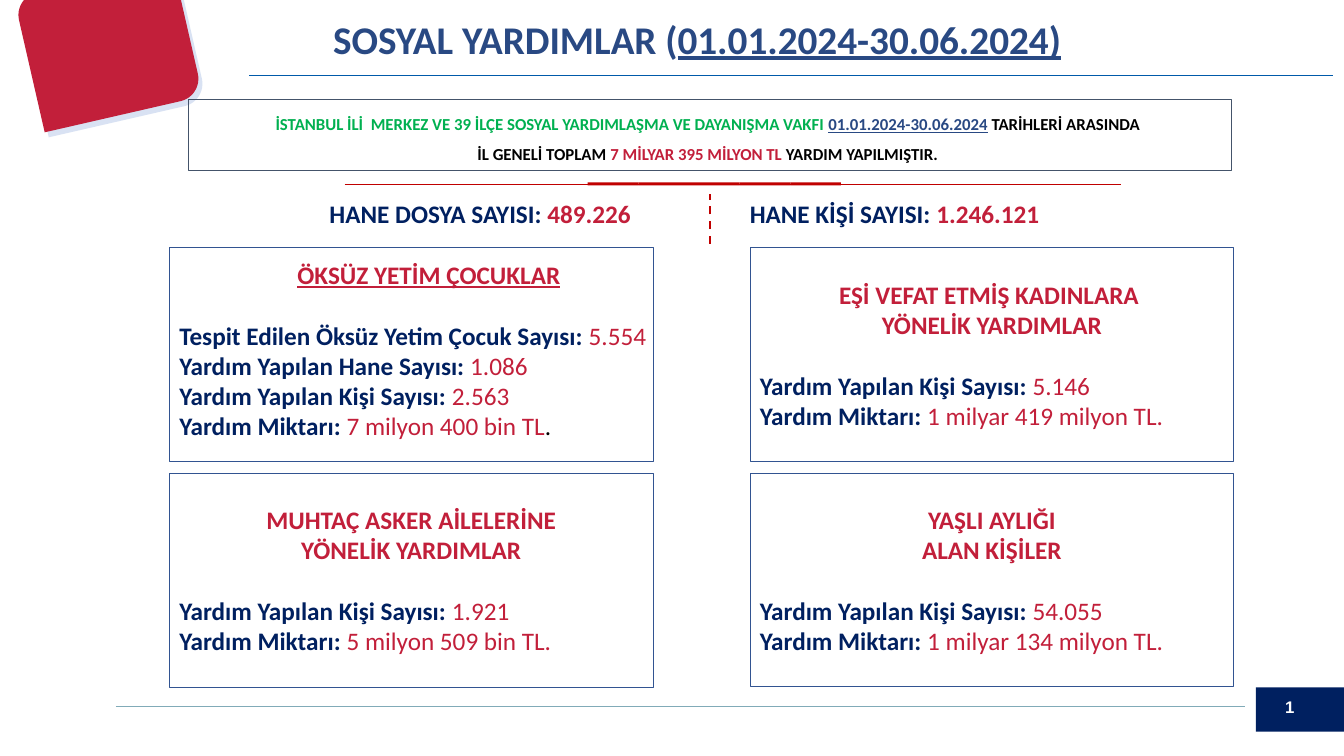
from dataclasses import dataclass

from lxml.etree import SubElement
from pptx import Presentation
from pptx.dml.color import RGBColor
from pptx.enum.dml import MSO_LINE_DASH_STYLE as Dash
from pptx.enum.shapes import MSO_CONNECTOR as Connector, MSO_SHAPE as Preset
from pptx.enum.text import MSO_ANCHOR as Anchor, MSO_AUTO_SIZE as AutoSize, PP_ALIGN as Align
from pptx.oxml.ns import qn
from pptx.util import Inches, Pt


@dataclass(frozen=True)
class Theme:
    """Colours, fonts and type sizes of the slide."""
    navy: str = "002060"
    crimson: str = "C21F3A"
    red: str = "C00000"
    title: str = "294983"
    green: str = "00B050"
    black: str = "000000"
    white: str = "FFFFFF"
    shade: str = "4472C4"
    card: str = "325491"
    slate: str = "44546A"
    rule: str = "005AAA"
    footer: str = "81ABB8"
    font: str = "Calibri"
    number_font: str = "Arial"
    title_size: int = 28
    body_size: int = 18
    small_size: int = 12


@dataclass(frozen=True)
class Ink:
    """One run of text with its look."""
    text: str
    color: str
    bold: bool = True
    underline: bool = False


@dataclass(frozen=True)
class Line:
    """One paragraph with its alignment and spacing."""
    runs: tuple
    align: Align = Align.LEFT
    after: float = 0
    spacing: float = 1


class Board:
    """Draws on one slide; lengths are percent of its width and height."""

    def __init__(self, deck, theme):
        """Add a title-only slide to the deck."""
        self.deck, self.theme = deck, theme
        self.slide = deck.slides.add_slide(deck.slide_layouts[5])

    def place(self, x, y, w, h):
        """Turn percent shares into slide lengths."""
        width, height = self.deck.slide_width, self.deck.slide_height
        return [round(share * full / 100) for share, full in zip((x, y, w, h), (width, height) * 2)]

    def rule(self, start, end, color, weight, dash=None):
        """Draw a straight line between two points."""
        line = self.slide.shapes.add_connector(Connector.STRAIGHT, *self.place(*start, *end))
        line.line.color.rgb = RGBColor.from_string(color)
        line.line.width = Pt(weight)
        if dash:
            line.line.dash_style = dash
        SubElement(line._element.spPr, qn("a:effectLst"))

    def panel(self, box, fill=None, outline=None, weight=0.5, preset=Preset.RECTANGLE, turn=0, alpha=None):
        """Draw a preset shape, filled or outlined."""
        panel = self.slide.shapes.add_shape(preset, *self.place(*box))
        panel.shadow.inherit = False
        panel.rotation = turn
        if fill:
            panel.fill.solid()
            panel.fill.fore_color.rgb = RGBColor.from_string(fill)
        else:
            panel.fill.background()
        if outline:
            panel.line.color.rgb = RGBColor.from_string(outline)
            panel.line.width = Pt(weight)
        else:
            panel.line.fill.background()
        if alpha:
            color = panel._element.spPr.find(qn("a:solidFill"))[0]
            SubElement(color, qn("a:alpha")).set("val", str(alpha * 1000))
        return panel

    def fill_text(self, shape, lines, size, font=None):
        """Fill a shape with paragraphs, run by run."""
        frame = shape.text_frame
        frame.word_wrap = True
        frame.auto_size = AutoSize.NONE
        frame.vertical_anchor = Anchor.TOP
        for index, line in enumerate(lines):
            paragraph = frame.add_paragraph() if index else frame.paragraphs[0]
            paragraph.alignment = line.align
            paragraph.line_spacing = line.spacing
            paragraph.space_before, paragraph.space_after = Pt(0), Pt(line.after)
            for ink in line.runs:
                run = paragraph.add_run()
                run.text = ink.text
                run.font.name = font or self.theme.font
                run.font.size = Pt(size)
                run.font.bold, run.font.underline = ink.bold, ink.underline
                run.font.color.rgb = RGBColor.from_string(ink.color)

    def text(self, box, lines, size, font=None):
        """Add a text box."""
        self.fill_text(self.slide.shapes.add_textbox(*self.place(*box)), lines, size, font)

    def title(self, box, lines):
        """Move and fill the title placeholder."""
        heading = self.slide.shapes.title
        heading.left, heading.top, heading.width, heading.height = self.place(*box)
        self.fill_text(heading, lines, self.theme.title_size)

    def card(self, corner, text_box, heading, facts, underline=False, tail=()):
        """Draw a framed card with a heading and its figures."""
        theme = self.theme
        self.panel((*corner, 36, 28.27), outline=theme.card)
        last = len(heading) - 1
        lines = [Line((Ink(words, theme.crimson, underline=underline),), Align.CENTER, 22 if i == last else 0)
                 for i, words in enumerate(heading)]
        for label, value in facts:
            closing = tail if label == AMOUNT else ()
            lines.append(Line((Ink(f"{label}: ", theme.navy), Ink(value, theme.crimson, False), *closing)))
        self.text(text_box, lines, theme.body_size)


PEOPLE = "Yardım Yapılan Kişi Sayısı"
AMOUNT = "Yardım Miktarı"
PERIOD = "01.01.2024-30.06.2024"
LEFT, RIGHT = 12.6, 55.8


def main():
    """Build and save the slide."""
    deck = Presentation()
    deck.slide_width, deck.slide_height = Inches(13.33), Inches(7.5)
    theme = Theme()
    board = Board(deck, theme)

    board.rule((8.63, 93.47), (92.63, 93.47), theme.footer, 0.75)
    board.panel((93.45, 90.93, 6.55, 5.87), theme.navy)
    board.text((94.88, 91.47, 7.43, 4), [Line((Ink("1", theme.white),))], theme.small_size, theme.number_font)
    board.rule((18.53, 10), (99.15, 10), theme.rule, 1)
    for x, y, color, alpha in ((2.33, -2.27, theme.shade, 20), (2.03, -2.93, theme.crimson, None)):
        board.panel((x, y, 12.08, 18.27), color, preset=Preset.ROUND_2_DIAG_RECTANGLE, turn=347.1, alpha=alpha)

    board.title((11.63, 1.33, 80.48, 7.6), [Line((
        Ink("SOSYAL YARDIMLAR (", theme.title),
        Ink(f"{PERIOD})", theme.title, underline=True)), Align.CENTER)])

    summary = board.panel((14.03, 13.07, 77.55, 9.47), outline=theme.slate, weight=0.25)
    board.fill_text(summary, [
        Line((Ink("İSTANBUL İLİ  MERKEZ VE 39 İLÇE SOSYAL YARDIMLAŞMA VE DAYANIŞMA VAKFI ", theme.green),
              Ink(PERIOD, theme.title, underline=True),
              Ink(" TARİHLERİ ARASINDA ", theme.black)), Align.CENTER, spacing=1.5),
        Line((Ink("İL GENELİ TOPLAM ", theme.black),
              Ink("7 MİLYAR 395 MİLYON TL ", theme.crimson),
              Ink("YARDIM YAPILMIŞTIR. ", theme.black)), Align.CENTER, spacing=1.5),
    ], theme.small_size)

    for step in range(5):
        board.panel((43.73 + step * 3.77, 24.13, 3.77, 0.4), theme.red)
    board.rule((25.65, 24.33), (83.4, 24.33), theme.red, 0.5)
    board.rule((52.8, 32.27), (52.8, 25.6), theme.red, 1.5, Dash.DASH)

    for x, label, count in ((23.78, "HANE DOSYA SAYISI: ", "489.226"), (55.05, "HANE KİŞİ SAYISI: ", "1.246.121")):
        board.text((x, 25.6, 27.38, 5.33),
                   [Line((Ink(label, theme.navy), Ink(count, theme.crimson)))], theme.body_size)

    board.card((LEFT, 32.7), (LEFT, 33.6, 38.63, 25.6), ["ÖKSÜZ YETİM ÇOCUKLAR"], [
        ("Tespit Edilen Öksüz Yetim Çocuk Sayısı", "5.554"),
        ("Yardım Yapılan Hane Sayısı", "1.086"),
        (PEOPLE, "2.563"),
        (AMOUNT, "7 milyon 400 bin TL"),
    ], underline=True, tail=(Ink(".", theme.black, False),))
    for x, y, text_top, heading, people, amount in (
        (RIGHT, 32.75, 36.27, ["EŞİ VEFAT ETMİŞ KADINLARA ", "YÖNELİK YARDIMLAR"],
         "5.146", "1 milyar 419 milyon TL."),
        (LEFT, 62.65, 66, ["MUHTAÇ ASKER AİLELERİNE", "YÖNELİK YARDIMLAR"],
         "1.921", "5 milyon 509 bin TL."),
        (RIGHT, 62.55, 66, ["YAŞLI AYLIĞI", "ALAN KİŞİLER"],
         "54.055", "1 milyar 134 milyon TL."),
    ):
        board.card((x, y), (x, text_top, 36, 21.6), heading, [(PEOPLE, people), (AMOUNT, amount)])

    deck.save("out.pptx")


if __name__ == "__main__":
    main()
